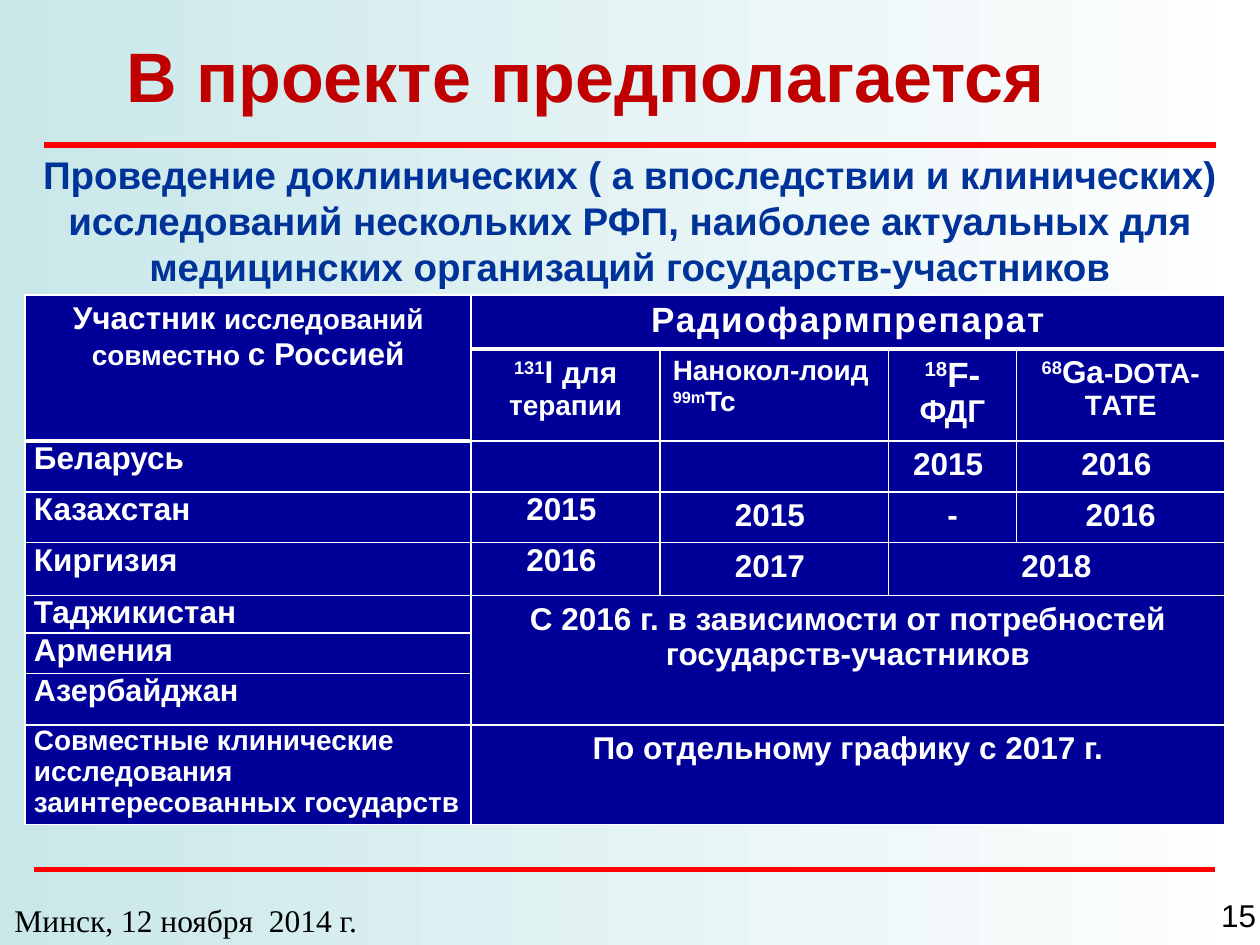
import pptx
import pptx.dml.color
import pptx.enum.shapes
import pptx.enum.text
import pptx.oxml
import pptx.oxml.ns
import pptx.util
from pptx.util import Inches

ALIGN = pptx.enum.text.PP_ALIGN
ANCHOR = pptx.enum.text.MSO_ANCHOR
NS = pptx.oxml.ns.nsdecls("a")
RED, NAVY, WHITE, BLACK = "FF0000", "000099", "FFFFFF", "000000"


def rgb(hex_color):
    return pptx.dml.color.RGBColor.from_string(hex_color)


def apply(target, values):
    for name, value in values.items():
        setattr(target, name, value)


def write(frame, runs, align, color, bold=True, font="Arial"):
    paragraph = frame.paragraphs[0]
    paragraph.alignment = align
    for wording, size, *baseline in runs:
        run = paragraph.add_run()
        run.text = wording
        apply(run.font, {"name": font, "size": pptx.util.Pt(size), "bold": bold})
        run.font.color.rgb = rgb(color)
        if baseline:
            run.font._element.set("baseline", str(baseline[0] * 1000))
    return paragraph


def paint_background(slide):
    fill = slide.background.fill
    fill.gradient()
    fill.gradient_angle = 0
    for stop, (position, color) in zip(fill.gradient_stops, [(0, "C9E7E9"), (1, WHITE)]):
        stop.position = position
        stop.color.rgb = rgb(color)


def add_rule(slide, left, top, width):
    rule = slide.shapes.add_connector(
        pptx.enum.shapes.MSO_CONNECTOR.STRAIGHT,
        Inches(left), Inches(top), Inches(left + width), Inches(top))
    rule.line.color.rgb = rgb(RED)
    rule.line.width = pptx.util.Pt(3)
    rule._element.spPr.append(pptx.oxml.parse_xml(f"<a:effectLst {NS}/>"))


def place_title(slide, left, top, width, height):
    title = slide.shapes.title
    apply(title, {"left": Inches(left), "top": Inches(top),
                  "width": Inches(width), "height": Inches(height)})
    title.text_frame.vertical_anchor = ANCHOR.MIDDLE
    write(title.text_frame, [("В проекте предполагается", 40)], ALIGN.CENTER, "C00000")


def add_text(slide, box, wording, size, color, wrap=True, **style):
    frame = slide.shapes.add_textbox(*map(Inches, box)).text_frame
    frame.word_wrap = wrap
    write(frame, [(wording, size)], ALIGN.CENTER, color, **style)


def style_cell(cell, thick_edges):
    properties = cell._tc.get_or_add_tcPr()
    for edge in "LRTB":
        width = pptx.util.Pt(3 if edge in thick_edges else 1)
        properties.append(pptx.oxml.parse_xml(
            f'<a:ln{edge} {NS} w="{width}"><a:solidFill><a:srgbClr val="{WHITE}"/>'
            f'</a:solidFill></a:ln{edge}>'))
    cell.fill.solid()
    cell.fill.fore_color.rgb = rgb(NAVY)


def fill_cell(cell, runs, align=ALIGN.CENTER, compact=False):
    if compact:
        apply(cell, {"margin_left": Inches(0.07), "margin_right": Inches(0.07),
                     "margin_top": 0, "margin_bottom": 0})
    return write(cell.text_frame, runs, align, WHITE)


def add_schedule(slide, left, top, width, height):
    columns = [3.54, 1.5, 1.81, 1.02, 1.65]
    rows = [0.43, 0.73, 0.4, 0.4, 0.42, 0.3, 0.32, 0.41, 0.79]
    table = slide.shapes.add_table(
        len(rows), len(columns), Inches(left), Inches(top), Inches(width), Inches(height)).table
    for column, share in zip(table.columns, columns):
        column.width = Inches(width * share / sum(columns))
    for row, share in zip(table.rows, rows):
        row.height = Inches(height * share / sum(rows))

    for row in range(len(rows)):
        for column in range(len(columns)):
            header_end = 1 if column == 0 else 0
            thick = {header_end: "B", header_end + 1: "T"}.get(row, "")
            style_cell(table.cell(row, column), thick)
    for first, last in [((0, 0), (1, 0)), ((0, 1), (0, 4)), ((4, 3), (4, 4)),
                        ((5, 1), (7, 4)), ((8, 1), (8, 4))]:
        table.cell(*first).merge(table.cell(*last))

    fill_cell(table.cell(0, 0), [("Участник ", 18), ("исследований совместно ", 16),
                                 ("с Россией", 18)])
    heading = fill_cell(table.cell(0, 1), [("Радиофармпрепарат", 20)])
    heading.runs[0].font._element.set("spc", "100")

    drugs = [
        [("131", 18, 30), ("I ", 18), ("для ", 17), ("терапии", 16)],
        [("Нанокол-лоид ", 16), ("99m", 16, 30), ("Tc", 16)],
        [("18", 20, 30), ("F- ", 20), ("ФДГ", 18)],
        [("68", 18, 30), ("Ga", 18), ("-DOTA-TАТЕ", 16)],
    ]
    for column, runs in enumerate(drugs, 1):
        fill_cell(table.cell(1, column), runs, ALIGN.LEFT if column == 2 else ALIGN.CENTER)

    participants = [
        ("Беларусь ", 18), ("Казахстан", 18), ("Киргизия", 18), ("Таджикистан", 18),
        ("Армения", 18), ("Азербайджан", 17.5),
        ("Совместные клинические исследования заинтересованных государств", 16),
    ]
    for row, participant in enumerate(participants, 2):
        fill_cell(table.cell(row, 0), [participant], ALIGN.LEFT, compact=True)

    plans = {
        (2, 3): "2015 ", (2, 4): "2016 ",
        (3, 1): "2015 ", (3, 2): "2015 ", (3, 3): "-", (3, 4): "2016",
        (4, 1): "2016 ", (4, 2): "2017 ", (4, 3): "2018",
        (5, 1): "С 2016 г. в зависимости от потребностей государств-участников",
        (8, 1): "По отдельному графику с 2017 г.",
    }
    for (row, column), plan in plans.items():
        fill_cell(table.cell(row, column), [(plan, 18)],
                  compact=column == 1 and row in (3, 4))


def add_footer(slide, left, top, width, height):
    add_text(slide, (left, top, 2.95, height), "Минск, 12 ноября  2014 г.", 18, BLACK,
             bold=False, font="Times New Roman")
    add_text(slide, (left + width - 0.41, top - 0.04, 0.48, height), "15", 18, BLACK,
             wrap=False, bold=False)


def main():
    deck = pptx.Presentation()
    apply(deck, {"slide_width": Inches(10), "slide_height": Inches(7.5)})
    slide = deck.slides.add_slide(deck.slide_layouts[5])
    paint_background(slide)
    add_rule(slide, 0.35, 1.15, 9.3)
    add_rule(slide, 0.27, 6.9, 9.37)
    place_title(slide, 0.43, 0.21, 8.43, 0.77)
    add_schedule(slide, 0.2, 2.34, 9.52, 4.2)
    add_text(slide, (0, 1.15, 10, 1.19),
             "Проведение доклинических ( а впоследствии и клинических) исследований "
             "нескольких РФП, наиболее актуальных для медицинских организаций "
             "государств-участников", 22, "003399")
    add_footer(slide, 0, 7.1, 10, 0.4)
    deck.save("out.pptx")


if __name__ == "__main__":
    main()
